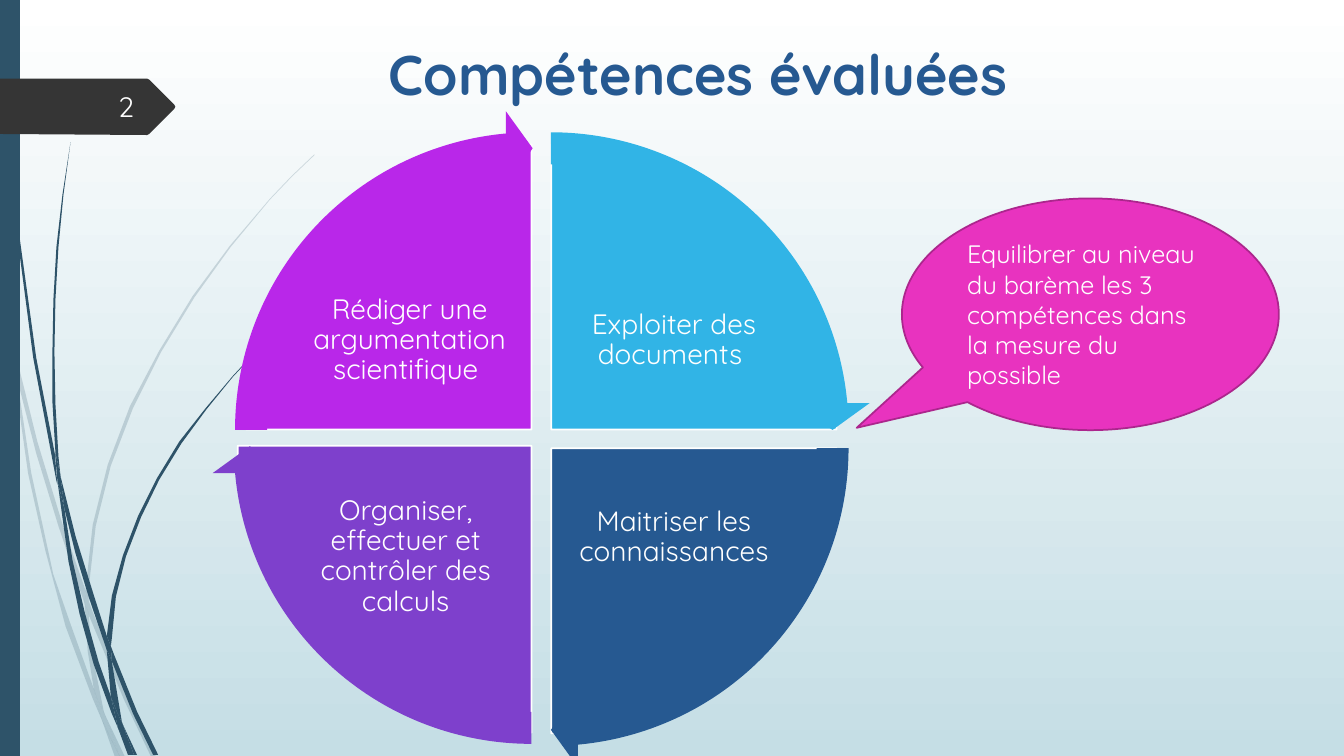
from dataclasses import dataclass

from pptx import Presentation
from pptx.dml.color import RGBColor
from pptx.enum.shapes import MSO_SHAPE
from pptx.enum.text import MSO_ANCHOR, MSO_AUTO_SIZE, PP_ALIGN
from pptx.oxml.ns import qn
from pptx.util import Cm, Pt
from lxml import etree

PIE = MSO_SHAPE.PIE
ARROW = MSO_SHAPE.CIRCULAR_ARROW
CALLOUT = MSO_SHAPE.OVAL_CALLOUT
RECTANGLE = MSO_SHAPE.RECTANGLE
LEFT, CENTER, RIGHT = PP_ALIGN.LEFT, PP_ALIGN.CENTER, PP_ALIGN.RIGHT
TOP, MIDDLE = MSO_ANCHOR.TOP, MSO_ANCHOR.MIDDLE
NO_AUTOFIT = MSO_AUTO_SIZE.NONE


@dataclass(frozen=True)
class Theme:
    """Colours and type of the slide."""
    font: str = "Quicksand"
    title_size: int = 40
    body_size: int = 20
    callout_size: int = 18
    white: RGBColor = RGBColor(0xFF, 0xFF, 0xFF)
    mist: RGBColor = RGBColor(0xC5, 0xDE, 0xE5)
    slate: RGBColor = RGBColor(0x2E, 0x53, 0x69)
    charcoal: RGBColor = RGBColor(0x35, 0x35, 0x35)
    navy: RGBColor = RGBColor(0x26, 0x59, 0x91)
    sky: RGBColor = RGBColor(0x31, 0xB4, 0xE6)
    violet: RGBColor = RGBColor(0x7E, 0x40, 0xCC)
    magenta: RGBColor = RGBColor(0xB9, 0x27, 0xE9)
    pink: RGBColor = RGBColor(0xE8, 0x33, 0xBF)
    plum: RGBColor = RGBColor(0xAC, 0x26, 0x8D)


THEME = Theme()
UNIT = Cm(2.54)
QUARTER = 54

PALE_WISPS = [
    [(.58, 5.22), (.84, 5.99), (.85, 5.86), (.62, 5.2), (.37, 4.38), (.14, 3.45), (.17, 3.76),
     (.36, 4.5)],
    [(.92, 6.07), (.88, 5.96), (.88, 6.1), (1.23, 6.94), (1.5, 7.51), (1.55, 7.51), (1.27, 6.92)],
    [(1.19, 7.51), (1.24, 7.51), (1.05, 7.11)],
    [(.93, 6.83), (.7, 6.19), (.53, 5.7), (.31, 4.69), (.17, 3.76), (.11, 3.5), (.28, 4.7),
     (.45, 5.46), (.65, 6.21), (.92, 6.93), (1.01, 7.14), (.99, 7.07)],
    [(.84, 5.99), (.87, 6.46), (.93, 6.83), (.96, 6.92), (1.05, 7.11), (1.03, 7.06),
     (.91, 6.46), (.88, 6.1), (.88, 6.08)],
    [(.88, 5.84), (.95, 5.22), (1.1, 4.62), (1.32, 4.05), (1.6, 3.49), (1.93, 2.95),
     (2.29, 2.45), (2.68, 1.98), (2.9, 1.75), (3.12, 1.54), (3.12, 1.53), (2.89, 1.75),
     (2.68, 1.97), (2.28, 2.44), (1.91, 2.94), (1.58, 3.48), (1.29, 4.03), (1.07, 4.61),
     (.92, 5.21), (.85, 5.84), (.85, 5.86), (.88, 5.96)],
    [(1.01, 7.14), (1.14, 7.51), (1.19, 7.51)],
    [(.88, 6.08), (.88, 6.1), (.88, 5.96), (.85, 5.86), (.84, 5.99)],
    [(.96, 6.92), (.93, 6.83), (.99, 7.07), (1.01, 7.14), (1.19, 7.51), (1.05, 7.11)],
]
DARK_WISPS = [
    [(.07, 1.1), (.17, 2.33), (.33, 3.55), (.56, 4.77), (.57, 4.81), (.55, 4.57), (.55, 4.53),
     (.36, 3.55), (.19, 2.32), (.08, 1.09), (.05, .48), (.04, 0), (.03, 0), (.04, .48)],
    [(.88, 5.92), (1.06, 6.45), (1.06, 6.31), (.93, 5.9), (.75, 5.32), (.6, 4.72), (.64, 5.05),
     (.75, 5.49)],
    [(1.13, 6.49), (1.1, 6.41), (1.11, 6.56), (1.32, 7.08), (1.52, 7.49), (1.57, 7.49),
     (1.36, 7.06)],
    [(1.1, 6.91), (.98, 6.57), (.84, 6.07), (.72, 5.56), (.64, 5.05), (.57, 4.77), (.68, 5.57),
     (.79, 6.09), (.93, 6.59), (1.11, 7.08), (1.17, 7.22), (1.16, 7.17)],
    [(.6, 4.72), (.58, 4.53), (.55, 4.01), (.54, 3.49), (.55, 2.97), (.58, 2.45), (.63, 1.93),
     (.7, 1.41), (.62, 1.93), (.56, 2.45), (.53, 2.97), (.52, 3.49), (.52, 3.99), (.55, 4.49)],
    [(1.33, 7.49), (1.36, 7.49), (1.22, 7.19)],
    [(.57, 4.77), (.64, 5.05), (.6, 4.72), (.55, 4.49), (.55, 4.53)],
    [(1.11, 6.33), (1.15, 5.92), (1.25, 5.52), (1.4, 5.13), (1.58, 4.76), (1.8, 4.4),
     (2.05, 4.06), (2.31, 3.74), (2.45, 3.59), (2.61, 3.44), (2.6, 3.44), (2.45, 3.58),
     (2.31, 3.73), (2.04, 4.05), (1.78, 4.38), (1.56, 4.74), (1.37, 5.12), (1.22, 5.51),
     (1.11, 5.91), (1.06, 6.31), (1.1, 6.41)],
    [(1.17, 7.22), (1.27, 7.49), (1.31, 7.49)],
    [(1.06, 6.45), (1.1, 6.91), (1.16, 7.06), (1.22, 7.19), (1.21, 7.16), (1.11, 6.56),
     (1.09, 6.51)],
    [(1.06, 6.45), (1.09, 6.51), (1.11, 6.56), (1.1, 6.41), (1.06, 6.31)],
    [(1.16, 7.06), (1.1, 6.91), (1.16, 7.17), (1.17, 7.22), (1.3, 7.49), (1.33, 7.49),
     (1.22, 7.19)],
]
PAGE_TAG = [(0, .78), (1.46, .78), (1.48, .79), (1.73, 1.04), (1.74, 1.06), (1.73, 1.08),
            (1.48, 1.33), (1.46, 1.34), (0, 1.33)]

SKILLS = [
    ("Exploiter des documents ", THEME.sky, 3 * QUARTER,
     (1.38, .87, 14.37, 14.37), (.49, 0), (9, 3.84)),
    ("Maitriser les connaissances", THEME.navy, 0,
     (1.38, 1.34, 14.37, 14.37), (.49, .46), (9, 8.81)),
    ("Organiser, effectuer et contrôler des calculs", THEME.violet, QUARTER,
     (.66, 1.24, 14.81, 14.45), (0, .41), (2.24, 9.29)),
    ("Rédiger une argumentation scientifique ", THEME.magenta, 2 * QUARTER,
     (.88, .87, 14.37, 14.37), (.03, 0), (2.34, 3.84)),
]


def paint(shape, fill, line=None):
    """Give a shape a flat fill and an optional outline."""
    shape.shadow.inherit = False
    shape.fill.solid()
    shape.fill.fore_color.rgb = fill
    if line is None:
        shape.line.fill.background()
    else:
        shape.line.color.rgb = line
        shape.line.width = Pt(1.25)


def write(shape, text, size, color, align, anchor=MIDDLE, bold=False):
    """Put one formatted paragraph in a shape and return it."""
    frame = shape.text_frame
    frame.word_wrap = True
    frame.auto_size = NO_AUTOFIT
    frame.vertical_anchor = anchor
    frame.text = text
    paragraph = frame.paragraphs[0]
    paragraph.alignment = align
    font = paragraph.font
    font.name, font.size, font.bold = THEME.font, Pt(size), bold
    font.color.rgb = color
    return paragraph


def add_part(slide, kind, box, fill, line=None, adjustments=()):
    """Add a painted preset shape in a box given in centimetres."""
    shape = slide.shapes.add_shape(kind, *map(Cm, box))
    for index, value in enumerate(adjustments):
        shape.adjustments[index] = value
    paint(shape, fill, line)
    return shape


def add_outline(shapes, points, box, fill):
    """Add a closed polygon placed from the corner of a box."""
    corners = [(round(x * UNIT), round(y * UNIT)) for x, y in points]
    builder = shapes.build_freeform(*corners[0])
    builder.add_line_segments(corners[1:], close=True)
    shape = builder.convert_to_shape(Cm(box[0]), Cm(box[1]))
    paint(shape, fill)
    return shape


def draw_backdrop(slide, box):
    """Draw the gradient, the wisps, the side band and the page tag."""
    left, top, width, height = box
    fill = slide.background.fill
    fill.gradient()
    fill.gradient_angle = 270
    for stop, color in zip(fill.gradient_stops, (THEME.white, THEME.mist)):
        stop.color.rgb = color
    for wisps, opacity in ((PALE_WISPS, 20), (DARK_WISPS, 100)):
        group = slide.shapes.add_group_shape()
        for points in wisps:
            wisp = add_outline(group.shapes, points, box, THEME.slate)
            if opacity < 100:
                color = wisp._element.spPr.xpath("./a:solidFill/a:srgbClr")[0]
                etree.SubElement(color, qn("a:alpha")).set("val", str(opacity * 1000))
    add_part(slide, RECTANGLE, (left, top, .5, height), THEME.slate)
    add_outline(slide.shapes, PAGE_TAG, box, THEME.charcoal)
    number = slide.shapes.add_textbox(*map(Cm, (left + 1.47, top + 2.18, 2.16, 1.02)))
    write(number, "2", THEME.body_size, THEME.white, RIGHT)


def draw_title(slide, box):
    """Place and format the title placeholder."""
    title = slide.shapes.title
    title.left, title.top, title.width, title.height = map(Cm, box)
    write(title, "Compétences évaluées ", THEME.title_size, THEME.navy, CENTER, TOP, True)


def draw_wheel(slide, box):
    """Draw the four labelled quarters and the arrows around them."""
    left, top = box[:2]
    for text, color, start, (x, y, width, height), _, label_at in SKILLS:
        end = (start + QUARTER) % (4 * QUARTER)
        add_part(slide, PIE, (left + x, top + y, width, height), color, THEME.white, (start, end))
        label = slide.shapes.add_textbox(
            Cm(left + label_at[0]), Cm(top + label_at[1]), Cm(5.31), Cm(3.94))
        frame = label.text_frame
        frame.margin_left = frame.margin_right = Cm(.07)
        frame.margin_top = frame.margin_bottom = Cm(.07)
        write(label, text, THEME.body_size, THEME.white, CENTER).line_spacing = .9
    for _, color, start, _, (x, y), _ in SKILLS:
        add_part(slide, ARROW, (left + x, top + y, 16.13, 16.13), color,
                 adjustments=(.05, 3.28, start + 50.72, start, .06))


def draw_callout(slide, box):
    """Draw the speech bubble about the marking scale."""
    callout = add_part(slide, CALLOUT, box, THEME.pink, THEME.plum, (-.62, .49))
    write(callout, "Equilibrer au niveau du barème les 3 compétences dans la mesure du possible",
          THEME.callout_size, THEME.white, LEFT)


def main():
    """Build and save the slide."""
    presentation = Presentation()
    presentation.slide_width, presentation.slide_height = Cm(33.87), Cm(19.05)
    slide = presentation.slides.add_slide(presentation.slide_layouts[5])
    draw_backdrop(slide, (0, 0, 33.87, 19.05))
    draw_title(slide, (4.95, .86, 25.68, 1.96))
    draw_wheel(slide, (5.33, 2.77, 16.62, 16.59))
    draw_callout(slide, (22.73, 5, 9.5, 5.84))
    presentation.save("out.pptx")


if __name__ == "__main__":
    main()
